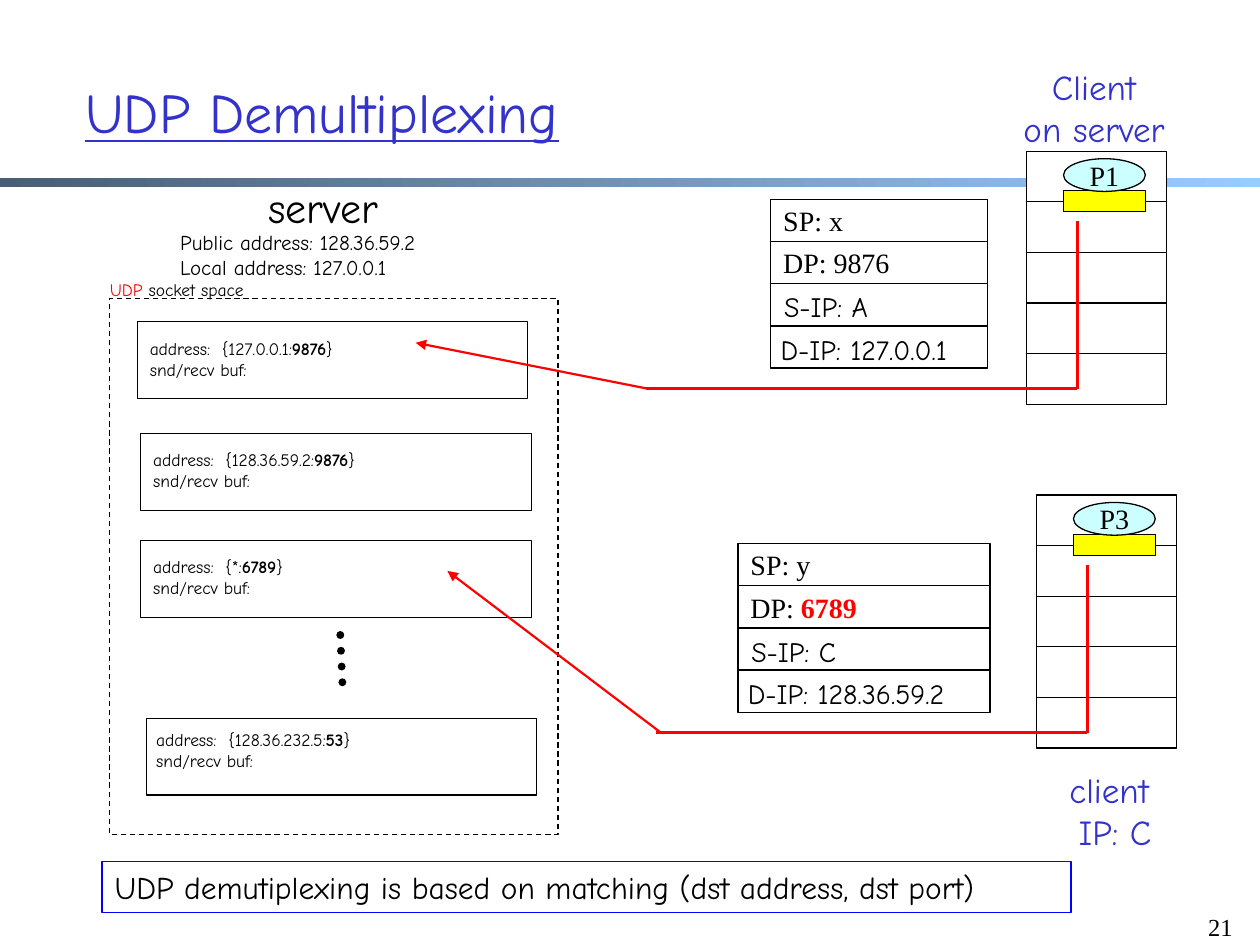
"""Build the UDP Demultiplexing slide."""
from lxml.etree import SubElement
from pptx import Presentation
from pptx.dml.color import RGBColor
from pptx.enum.dml import MSO_LINE as DASH
from pptx.enum.shapes import MSO_CONNECTOR as CONN, MSO_SHAPE as SHAPE
from pptx.enum.text import MSO_ANCHOR as ANCHOR, MSO_AUTO_SIZE as FIT, PP_ALIGN as ALIGN
from pptx.oxml.ns import qn
from pptx.util import Cm, Pt

COLORS = {
    "black": "000000", "white": "FFFFFF", "red": "FF0000", "blue": "0000FF",
    "title": "3333CC", "yellow": "FFFF00", "cyan": "CCFFFF",
    "bar_dark": "475E76", "bar_light": "99CCFF",
}
COMIC, TIMES = "Comic Neue", "Times New Roman"

prs = Presentation()
prs.slide_width, prs.slide_height = Cm(25.4), Cm(19.05)
s = prs.slides.add_slide(prs.slide_layouts[6])


def put(text, x, y, w, h, shape=None, fill=None, line="black", dash=None, size=16,
        font=COMIC, color="black", align=ALIGN.LEFT, anchor=ANCHOR.TOP, wrap=False,
        underline=None, accent=None, accent_color="black", accent_bold=True):
    box = Cm(x), Cm(y), Cm(w), Cm(h)
    if shape is None:
        sp = s.shapes.add_textbox(*box)
    else:
        sp = s.shapes.add_shape(shape, *box)
        sp.shadow.inherit = False
        if fill:
            sp.fill.solid()
            sp.fill.fore_color.rgb = RGBColor.from_string(COLORS[fill])
        else:
            sp.fill.background()
        if line:
            sp.line.color.rgb = RGBColor.from_string(COLORS[line])
            sp.line.width = Pt(0.75)
            sp.line.dash_style = dash
        else:
            sp.line.fill.background()
    if not text:
        return sp
    tf = sp.text_frame
    tf.word_wrap = wrap
    tf.vertical_anchor = anchor
    if shape is None and not wrap:
        tf.auto_size = FIT.SHAPE_TO_FIT_TEXT
    for i, row in enumerate(text.split("\n")):
        p = tf.paragraphs[0] if i == 0 else tf.add_paragraph()
        p.alignment = align
        for part in row.partition(accent) if accent else [row]:
            if part:
                r = p.add_run()
                r.text = part
                r.font.name, r.font.size, r.font.underline = font, Pt(size), underline
                marked = part == accent
                r.font.bold = marked and accent_bold
                r.font.color.rgb = RGBColor.from_string(COLORS[accent_color if marked else color])
    return sp


def wire(x1, y1, x2, y2, color="red", width=1.5, head=False, dash=None):
    c = s.shapes.add_connector(CONN.STRAIGHT, Cm(x1), Cm(y1), Cm(x2), Cm(y2))
    c.line.color.rgb = RGBColor.from_string(COLORS[color])
    c.line.width = Pt(width)
    sp_pr = c._element.spPr
    ln = sp_pr.find(qn("a:ln"))
    if dash:
        c.line.dash_style = dash
        ln.set("cap", "rnd")
    if head:
        SubElement(ln, qn("a:headEnd")).set("type", "triangle")
    SubElement(sp_pr, qn("a:effectLst"))


bar = put("", 0, 3.58, 25.4, 0.2, shape=SHAPE.RECTANGLE, line=None)
bar.fill.gradient()
bar.fill.gradient_angle = 0
for stop, name in zip(bar.fill.gradient_stops, ("bar_dark", "bar_light")):
    stop.color.rgb = RGBColor.from_string(COLORS[name])

put("21", 23.83, 18.26, 1.27, 1.27, size=14, font=TIMES, align=ALIGN.RIGHT, wrap=True)
put("UDP Demultiplexing", 1.47, 0.66, 22.96, 3.18, size=32, color="title",
    anchor=ANCHOR.MIDDLE, wrap=True, underline=True)
put("server", 4.98, 3.53, 3.07, 1.27, size=24, align=ALIGN.CENTER, anchor=ANCHOR.MIDDLE)
put("", 2.21, 6.02, 9.04, 10.8, shape=SHAPE.RECTANGLE, dash=DASH.DASH)
put("UDP socket space", 1.85, 5.51, 3.43, 0.69, size=10, align=ALIGN.CENTER,
    accent="UDP", accent_color="red", accent_bold=False)
put("Public address: 128.36.59.2\nLocal address: 127.0.0.1", 3.38, 4.5, 5.97, 1.3, size=12)
put("UDP demutiplexing is based on matching (dst address, dst port)", 2.06, 17.37, 19.53, 1.02,
    shape=SHAPE.RECTANGLE, line="blue", size=18, wrap=True)

sockets = [
    (2.77, 6.48, 0, 0.2, 4.85, "127.0.0.1", "9876"),
    (2.84, 8.74, 0, 0.18, 5.33, "128.36.59.2", "9876"),
    (2.84, 10.9, 0, 0.18, 3.58, "*", "6789"),
    (2.95, 14.48, -0.05, 0.1, 5.08, "128.36.232.5", "53"),
]
for x, y, dx, dy, w, ip, port in sockets:
    put("", x, y, 7.87, 1.55, shape=SHAPE.RECTANGLE)
    put(f"address:  {{{ip}:{port}}}\nsnd/recv buf:", x + dx, y + dy, w, 1.11, size=10, accent=port)
wire(6.86, 12.8, 6.91, 13.94, color="black", width=4.5, dash=DASH.ROUND_DOT)

clients = [
    ("P1", 20.7, 3.05, 13.03, (8.38, 6.91)),
    ("P3", 20.9, 9.98, 13.31, (9.02, 11.51)),
]
for process, x, y, elbow, target in clients:
    for layer in range(5):
        put("", x, y + layer * 1.02, 2.82, 1.02, shape=SHAPE.RECTANGLE, fill="white")
    put("", x + 0.74, y + 0.79, 1.65, 0.43, shape=SHAPE.RECTANGLE, fill="yellow")
    put(process, x + 0.74, y + 0.15, 1.65, 0.66, shape=SHAPE.OVAL, fill="cyan",
        font=TIMES, align=ALIGN.CENTER, anchor=ANCHOR.MIDDLE)
    wire(x + 1.02, y + 1.4, x + 1.02, y + 4.8)
    wire(x - 7.67, y + 4.78, x + 1.02, y + 4.78)
    wire(*target, elbow, y + 4.78, width=1.25, head=True)
put("Client\non server", 20.24, 1.19, 3.63, 1.96, size=20, color="title", align=ALIGN.CENTER)
put("client\n IP: C", 21.18, 15.37, 2.36, 1.96, size=20, color="title", align=ALIGN.CENTER)

packets = [
    (15.54, 4.02, 4.37, "SP: x", "DP: 9876", None, (" S-IP: A", 2.69), (" D-IP: 127.0.0.1", 4.62)),
    (14.88, 10.96, 5.08, "SP: y", "DP: 6789", "6789", (" S-IP: C", 2.62), (" D-IP: 128.36.59.2", 5.38)),
]
for x, y, w, source, dest, accent, source_ip, dest_ip in packets:
    for i, field in enumerate((source, dest, "", "")):
        put(field, x, y + i * 0.85, w, 0.85, shape=SHAPE.RECTANGLE, fill="white", font=TIMES,
            anchor=ANCHOR.MIDDLE, wrap=True, accent=accent, accent_color="red")
    for i, dx, (field, width) in ((2, -0.17, source_ip), (3, -0.24, dest_ip)):
        put(field, x + dx, y + i * 0.85, width, 0.94)

prs.save("out.pptx")
